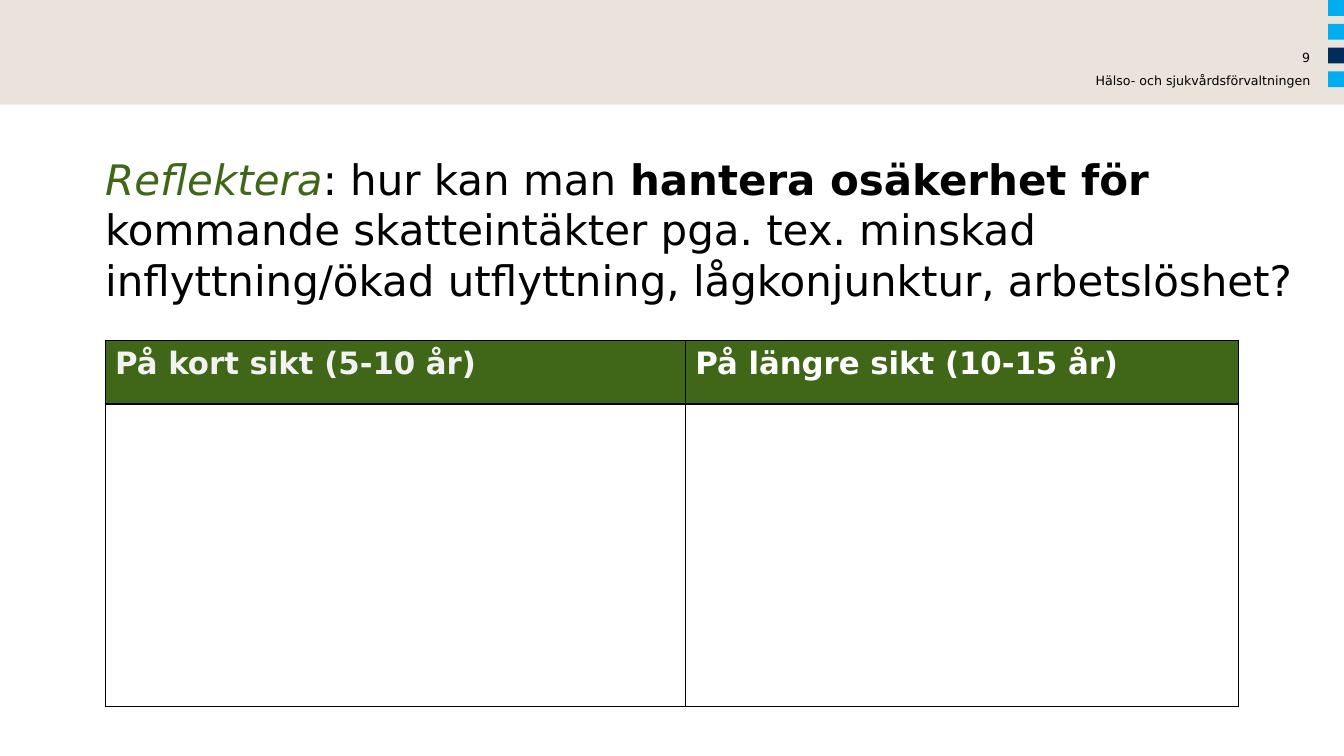
from lxml.etree import SubElement
from pptx import Presentation
from pptx.dml.color import RGBColor
from pptx.enum.shapes import MSO_SHAPE
from pptx.enum.text import MSO_ANCHOR, MSO_AUTO_SIZE, PP_ALIGN
from pptx.oxml.ns import qn
from pptx.util import Cm, Pt

FONT = "DejaVu Sans"
BLACK = RGBColor(0x00, 0x00, 0x00)
WHITE = RGBColor(0xFF, 0xFF, 0xFF)
PALE_GREY = RGBColor(0xF2, 0xF2, 0xF2)
GREEN = RGBColor(0x40, 0x66, 0x17)
SAND = RGBColor(0xE9, 0xE3, 0xDC)
SKY = RGBColor(0x00, 0xAE, 0xEF)
NAVY = RGBColor(0x00, 0x2D, 0x5A)

PAGE_WIDTH, PAGE_HEIGHT = Cm(33.87), Cm(19.05)
MARGIN = Cm(2.65)


def add_span(para, text, size, color=BLACK, bold=False, italic=False):
    span = para.add_run()
    span.text = text
    font = span.font
    font.name, font.size, font.bold, font.italic = FONT, Pt(size), bold, italic
    font.color.rgb = color


def clear_frame(frame):
    """Make the text start at the very edge of its box and wrap inside it."""
    frame.margin_left = frame.margin_right = frame.margin_top = frame.margin_bottom = 0
    frame.word_wrap = True
    frame.auto_size = MSO_AUTO_SIZE.NONE
    frame.vertical_anchor = MSO_ANCHOR.TOP


def add_block(page, left, top, width, height, color):
    block = page.shapes.add_shape(MSO_SHAPE.RECTANGLE, left, top, width, height)
    block.shadow.inherit = False
    block.fill.solid()
    block.fill.fore_color.rgb = color
    block.line.fill.background()


def add_header(page, left, top, width, height):
    add_block(page, left, top, width, height, SAND)
    side, pitch = Cm(0.4), Cm(0.6)
    for index, color in enumerate((SKY, SKY, NAVY, SKY)):
        add_block(page, left + width - side, top + index * pitch, side, side, color)

    label_width = Cm(9.32)
    label_left = left + width - Cm(0.85) - label_width
    for text, offset in (("9", Cm(1.25)), ("Hälso- och sjukvårdsförvaltningen", Cm(1.83))):
        box = page.shapes.add_textbox(label_left, top + offset, label_width, Cm(0.36))
        clear_frame(box.text_frame)
        para = box.text_frame.paragraphs[0]
        para.alignment = PP_ALIGN.RIGHT
        add_span(para, text, 9)


def add_title(page, left, top, width, height):
    title = page.shapes.title
    title.left, title.top, title.width, title.height = left, top, width, height
    clear_frame(title.text_frame)
    para = title.text_frame.paragraphs[0]
    para.alignment = PP_ALIGN.LEFT
    para.line_spacing = Pt(36)
    add_span(para, "Reflektera", 30, GREEN, italic=True)
    add_span(para, ": hur kan man ", 30)
    add_span(para, "hantera osäkerhet för", 30, bold=True)
    add_span(para, " kommande skatteintäkter pga. tex. minskad "
             "inflyttning/ökad utflyttning, lågkonjunktur, arbetslöshet?", 30)


def add_borders(cell):
    properties = cell._tc.get_or_add_tcPr()
    for side in ("a:lnL", "a:lnR", "a:lnT", "a:lnB"):
        line = SubElement(properties, qn(side), w=str(Pt(1)))
        fill = SubElement(line, qn("a:solidFill"))
        SubElement(fill, qn("a:srgbClr"), val=str(BLACK))


def add_horizon_table(page, left, top, width, height):
    """Two time horizons, each with an empty field for answers."""
    table = page.shapes.add_table(2, 2, left, top, width, height).table
    table.horz_banding = False
    first_column, header_row = Cm(14.62), Cm(1.6)
    table.columns[0].width = first_column
    table.columns[1].width = width - first_column
    table.rows[0].height = header_row
    table.rows[1].height = height - header_row

    for cell in table.iter_cells():
        add_borders(cell)
        cell.fill.solid()
        cell.fill.fore_color.rgb = WHITE

    headings = (("På kort sikt (5-10 år)", PALE_GREY), ("På längre sikt (10-15 år)", WHITE))
    for column, (text, color) in enumerate(headings):
        cell = table.cell(0, column)
        cell.fill.fore_color.rgb = GREEN
        para = cell.text_frame.paragraphs[0]
        para.alignment = PP_ALIGN.LEFT
        add_span(para, text, 22, color, bold=True)


def main():
    deck = Presentation()
    deck.slide_width, deck.slide_height = PAGE_WIDTH, PAGE_HEIGHT
    page = deck.slides.add_slide(deck.slide_layouts[5])
    add_header(page, 0, 0, PAGE_WIDTH, Cm(2.64))
    add_title(page, MARGIN, Cm(3.87), PAGE_WIDTH - MARGIN, Cm(3.12))
    add_horizon_table(page, MARGIN, Cm(8.58), Cm(28.56), Cm(9.22))
    deck.save("out.pptx")


if __name__ == "__main__":
    main()
